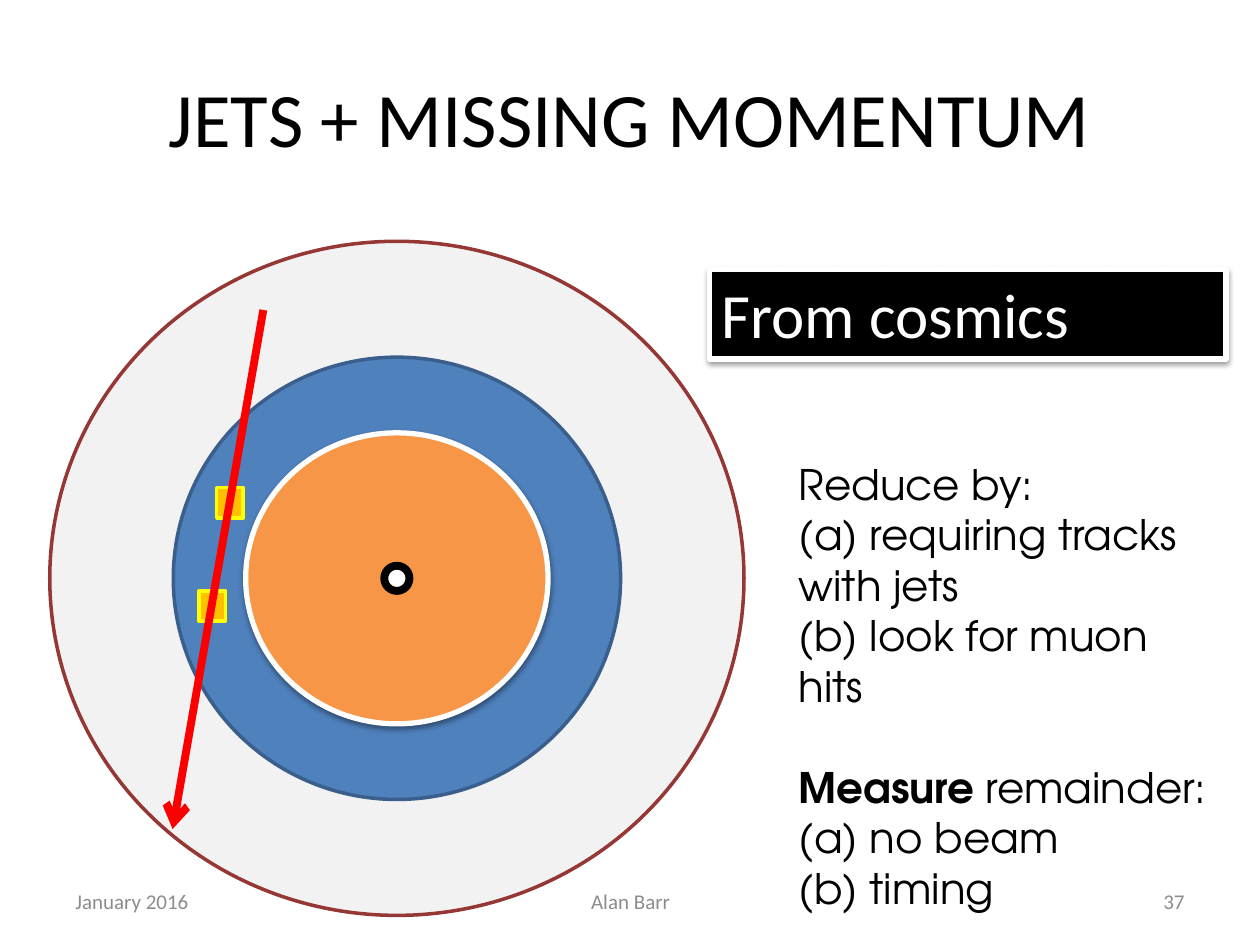
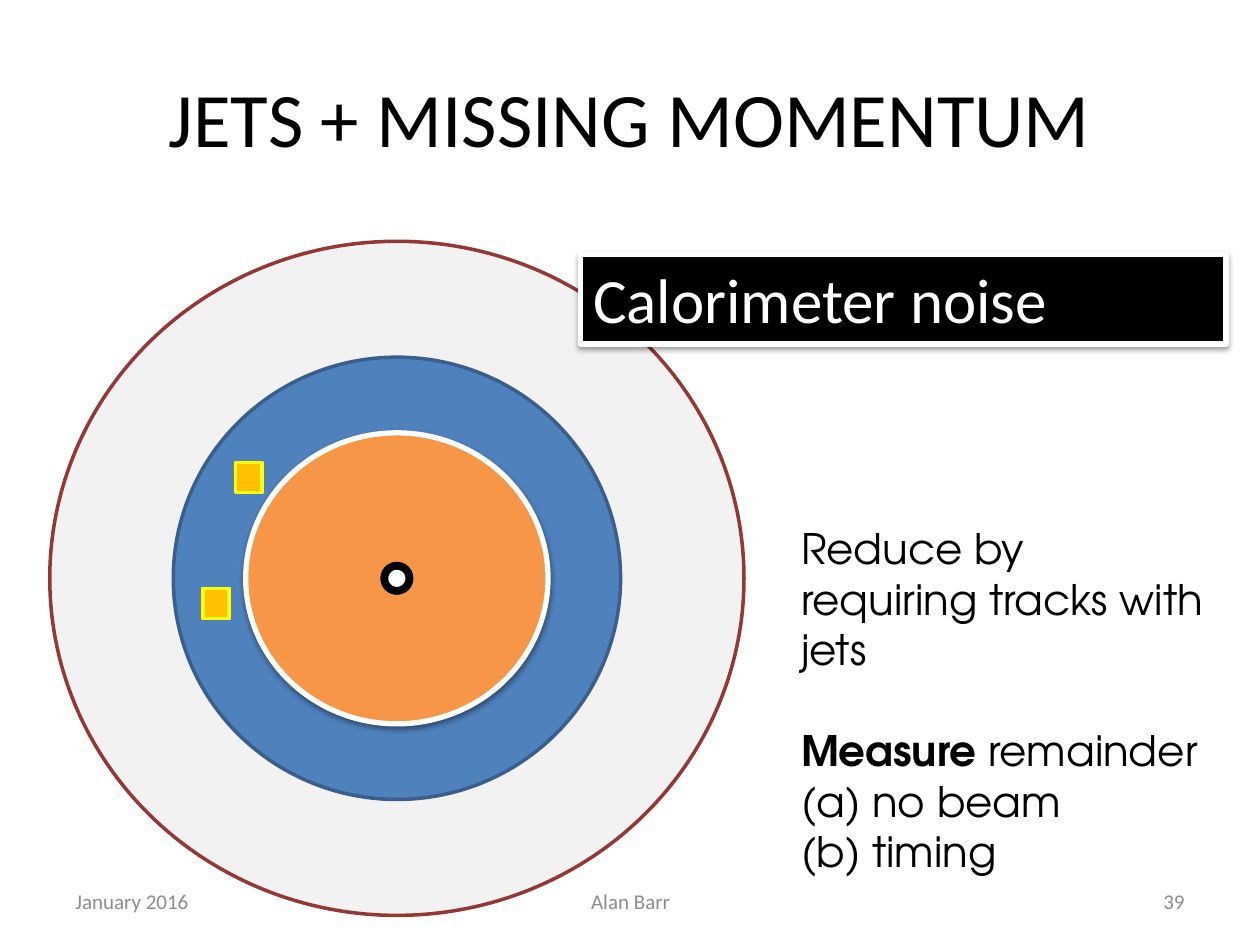
from lxml import etree
from pptx import Presentation
from pptx import util as u
from pptx.dml.color import RGBColor
from pptx.enum import shapes, text
from pptx.oxml import ns

BLACK = RGBColor(0x00, 0x00, 0x00)
WHITE = RGBColor(0xFF, 0xFF, 0xFF)
FOOTER_GREY = RGBColor(0x8C, 0x8C, 0x8C)
MUON_GREY = RGBColor(0xF2, 0xF2, 0xF2)
MUON_EDGE = RGBColor(0x95, 0x37, 0x35)
CALO_BLUE = RGBColor(0x4F, 0x81, 0xBD)
CALO_EDGE = RGBColor(0x3A, 0x5F, 0x8C)
TRACKER_ORANGE = RGBColor(0xF7, 0x96, 0x46)
HIT_GOLD = RGBColor(0xFF, 0xC0, 0x00)
HIT_EDGE = RGBColor(0xFF, 0xFF, 0x00)
COSMIC_RED = RGBColor(0xFA, 0x00, 0x00)

# The slide is a grid of 10 columns and 7.5 rows.
WIDTH, HEIGHT = u.Inches(10), u.Inches(7.5)
COLUMN, ROW = WIDTH / 10, HEIGHT / 7.5

TITLE = "JETS + MISSING MOMENTUM"
TITLE_FONT = {"name": "Calibri", "size": u.Pt(44), "color": BLACK}
LABEL_FONT = {"name": "Calibri", "size": u.Pt(36), "color": WHITE}
NOTE_FONT = {"name": "TeX Gyre Adventor", "size": u.Pt(24), "color": BLACK}
FOOTER_FONT = {"name": "Calibri", "size": u.Pt(12), "color": FOOTER_GREY}

DETECTOR_CENTRE = (3.15, 4.59)
# width, height, fill, edge, edge points, shadow
DETECTOR_RINGS = [
    (5.51, 5.35, MUON_GREY, MUON_EDGE, 2, False),
    (3.55, 3.51, CALO_BLUE, CALO_EDGE, 2, False),
    (2.4, 2.31, TRACKER_ORANGE, WHITE, 3, True),
]
BEAM_PIPE = (0.2, 0.2, WHITE, BLACK, 4.5, False)
HIT_SIZE = (0.21, 0.24)
RIGHT_EDGE = 9.73
NOTE_WIDTH = 3.46
LABEL_HEIGHT = 0.71

MEASURE_GAP = u.Pt(29)


def grid(left, top, width, height):
    """Turn columns and rows into slide lengths."""
    return [u.Emu(round(n * unit)) for n, unit in
            zip((left, top, width, height), (COLUMN, ROW, COLUMN, ROW))]


def style(span, formats):
    for key, value in formats.items():
        if key == "color":
            span.font.color.rgb = value
        else:
            setattr(span.font, key, value)


def write(para, words, formats, bold=False):
    span = para.add_run()
    span.text = words
    style(span, {**formats, "bold": bold})


def add_shadow(shape):
    effects = shape._element.spPr.find(ns.qn("a:effectLst"))
    shadow = etree.SubElement(effects, ns.qn("a:outerShdw"), blurRad=str(u.Pt(3.1)),
                              dist=str(u.Pt(1.6)), dir="5400000", rotWithShape="0")
    color = etree.SubElement(shadow, ns.qn("a:srgbClr"), val=str(BLACK))
    etree.SubElement(color, ns.qn("a:alpha"), val="38000")


def add_figure(page, kind, place, fill, edge, points, shadow=False):
    shape = page.shapes.add_shape(kind, *grid(*place))
    shape.shadow.inherit = False
    shape.fill.solid()
    shape.fill.fore_color.rgb = fill
    shape.line.color.rgb = edge
    shape.line.width = u.Pt(points)
    if shadow:
        add_shadow(shape)
    return shape


def add_ring(page, width, height, *look):
    across, down = DETECTOR_CENTRE
    place = (across - width / 2, down - height / 2, width, height)
    add_figure(page, shapes.MSO_SHAPE.OVAL, place, *look)


def add_detector(page, hits, cosmic=None):
    for ring in DETECTOR_RINGS:
        add_ring(page, *ring)
    for hit in hits:
        add_figure(page, shapes.MSO_SHAPE.RECTANGLE, (*hit, *HIT_SIZE),
                   HIT_GOLD, HIT_EDGE, 2)
    if cosmic:
        add_arrow(page, *cosmic)
    add_ring(page, *BEAM_PIPE)


def add_arrow(page, start, end):
    arrow = page.shapes.add_connector(shapes.MSO_CONNECTOR.STRAIGHT,
                                      *grid(*start, *end))
    arrow.line.color.rgb = COSMIC_RED
    arrow.line.width = u.Pt(4.5)
    etree.SubElement(arrow.line._get_or_add_ln(), ns.qn("a:tailEnd"), type="arrow")
    etree.SubElement(arrow._element.spPr, ns.qn("a:effectLst"))


def add_label(page, words, top, width):
    """Black banner that ends at the right edge."""
    place = (RIGHT_EDGE - width, top, width, LABEL_HEIGHT)
    label = add_figure(page, shapes.MSO_SHAPE.RECTANGLE, place, BLACK, WHITE, 3, True)
    frame = label.text_frame
    frame.word_wrap = True
    frame.vertical_anchor = text.MSO_ANCHOR.TOP
    frame.auto_size = text.MSO_AUTO_SIZE.SHAPE_TO_FIT_TEXT
    frame.paragraphs[0].alignment = text.PP_ALIGN.LEFT
    write(frame.paragraphs[0], words, LABEL_FONT)


def add_text(page, place):
    frame = page.shapes.add_textbox(*grid(*place)).text_frame
    frame.word_wrap = True
    return frame


def add_note(page, left, top, height, reduce_by, remainder):
    frame = add_text(page, (left, top, NOTE_WIDTH, height))
    frame.auto_size = text.MSO_AUTO_SIZE.SHAPE_TO_FIT_TEXT
    para = frame.paragraphs[0]
    for number, line in enumerate(reduce_by):
        if number:
            para = frame.add_paragraph()
        write(para, line, NOTE_FONT)
    para = frame.add_paragraph()
    para.space_before = MEASURE_GAP
    write(para, "Measure", NOTE_FONT, bold=True)
    write(para, f" {remainder} (a) no beam", NOTE_FONT)
    write(frame.add_paragraph(), "(b) timing", NOTE_FONT)


def add_footers(page, number):
    align = text.PP_ALIGN
    for words, left, width, alignment in [
        ("January 2016", 0.5, 2.33, align.LEFT),
        ("Alan Barr", 3.42, 3.17, align.CENTER),
        (number, 7.17, 2.33, align.RIGHT),
    ]:
        frame = add_text(page, (left, 6.95, width, 0.4))
        frame.vertical_anchor = text.MSO_ANCHOR.MIDDLE
        frame.paragraphs[0].alignment = alignment
        write(frame.paragraphs[0], words, FOOTER_FONT)


def add_page(deck):
    page = deck.slides.add_slide(deck.slide_layouts.get_by_name("Title Only"))
    title = page.shapes.title
    title.left, title.top, title.width, title.height = grid(0.5, 0.3, 9, 1.25)
    title.text_frame.vertical_anchor = text.MSO_ANCHOR.MIDDLE
    para = title.text_frame.paragraphs[0]
    para.alignment = text.PP_ALIGN.CENTER
    write(para, TITLE, TITLE_FONT)
    return page


def main():
    deck = Presentation()
    deck.slide_width, deck.slide_height = WIDTH, HEIGHT

    cosmics = add_page(deck)
    add_detector(cosmics, hits=[(1.72, 3.87), (1.58, 4.69)],
                 cosmic=((2.09, 2.46), (1.37, 6.58)))
    add_label(cosmics, "From cosmics", top=2.14, width=4.1)
    add_note(cosmics, 6.24, 3.59, 3.74,
             ["Reduce by:", "(a) requiring tracks with jets", "(b) look for muon hits"],
             "remainder:")
    add_footers(cosmics, "37")

    noise = add_page(deck)
    add_detector(noise, hits=[(1.87, 3.67), (1.61, 4.67)])
    add_label(noise, "Calorimeter noise", top=2.02, width=5.12)
    add_note(noise, 6.26, 4.1, 2.93, ["Reduce by requiring tracks with jets"], "remainder")
    add_footers(noise, "39")

    deck.save("out.pptx")


if __name__ == "__main__":
    main()
